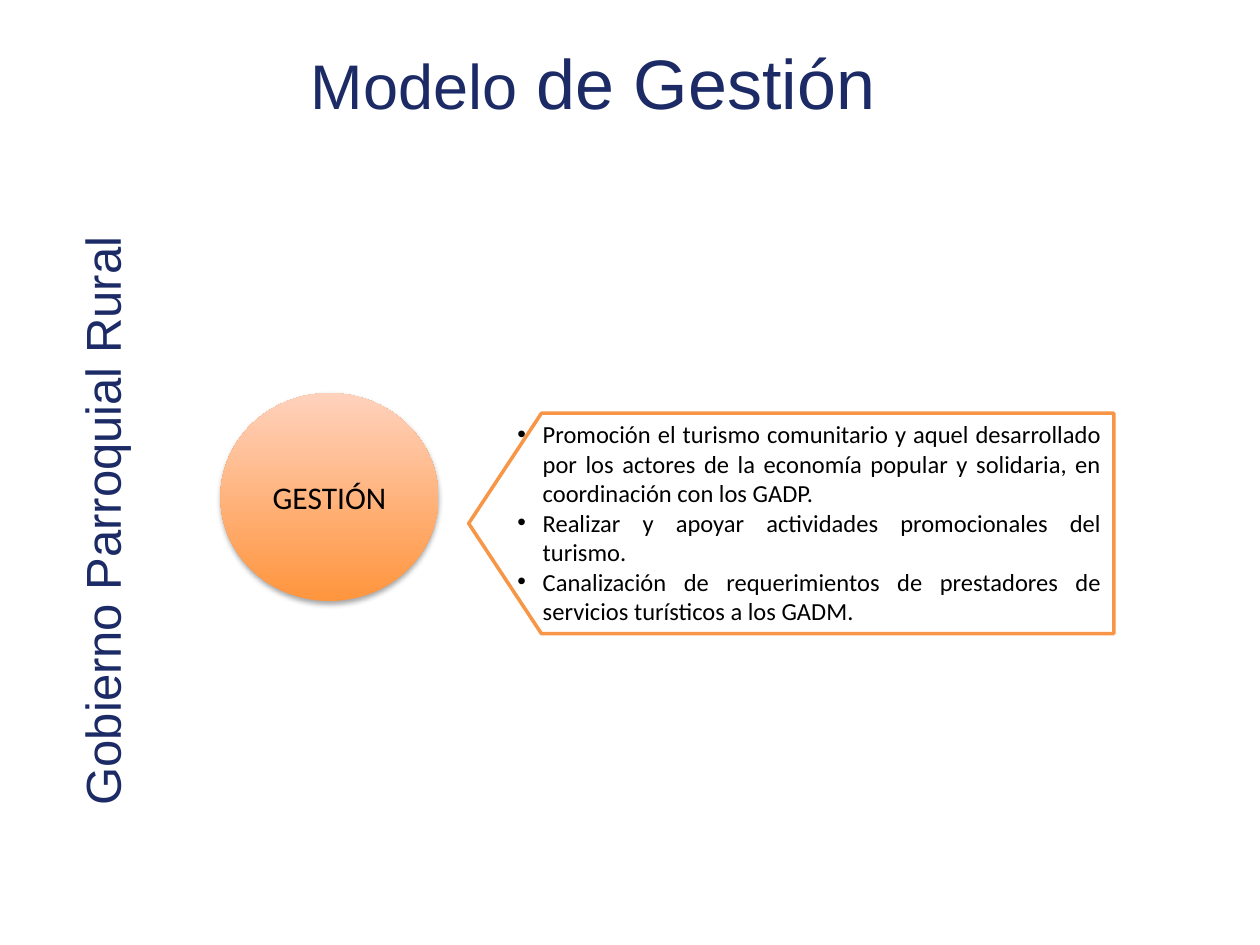
from dataclasses import dataclass
from lxml.etree import SubElement
from pptx import Presentation
from pptx.dml.color import RGBColor
from pptx.enum.shapes import MSO_SHAPE
from pptx.enum.text import MSO_ANCHOR, MSO_AUTO_SIZE, PP_ALIGN
from pptx.oxml.ns import qn
from pptx.util import Inches, Pt


@dataclass(frozen=True)
class Theme:
    head: str = "Arial"
    body: str = "Calibri"
    navy: str = "1C2A66"
    black: str = "000000"
    white: str = "FFFFFF"
    edge: str = "F79646"
    deep: str = "FF953E"
    pale: str = "FFD2BD"
    lead: int = 36
    title: int = 40
    side: int = 28
    hub: int = 18
    list: int = 14


THEME = Theme()
WIDE, HIGH = Inches(10), Inches(7.5)
DUTIES = (
    "Promoción el turismo comunitario y aquel desarrollado por los actores de la "
    "economía popular y solidaria, en coordinación con los GADP.",
    "Realizar y apoyar actividades promocionales del turismo.",
    "Canalización de requerimientos de prestadores de servicios turísticos a los GADM.",
)


def area(left, top, width, height):
    return [round(share * side / 100) for share, side in
            zip((left, top, width, height), (WIDE, HIGH, WIDE, HIGH))]


def style(run, face, size, color):
    run.font.name = face
    run.font.size = Pt(size)
    run.font.color.rgb = RGBColor.from_string(color)


def center(shape):
    frame = shape.text_frame
    frame.word_wrap = True
    frame.vertical_anchor = MSO_ANCHOR.MIDDLE
    para = frame.paragraphs[0]
    para.alignment = PP_ALIGN.CENTER
    return para


def write(shape, text, face, size, color):
    para = center(shape)
    para.text = text
    style(para.runs[0], face, size, color)


def add_title(slide, parts):
    title = slide.shapes.title
    title.left, title.top, title.width, title.height = area(5.8, 2.27, 82.5, 12.67)
    para = center(title)
    for text, size in parts:
        run = para.add_run()
        run.text = text
        style(run, THEME.head, size, THEME.navy)


def add_side(slide, text):
    box = slide.shapes.add_textbox(*area(-18.3, 48.8, 52.7, 12.67))
    box.rotation = 270
    write(box, text, THEME.head, THEME.side, THEME.navy)


def add_shade(shape):
    shape.shadow.inherit = False
    effects = shape.element.spPr.find(qn("a:effectLst"))
    shade = SubElement(effects, qn("a:outerShdw"), blurRad=str(Pt(3.1)),
                       dist=str(Pt(1.8)), dir="5400000", rotWithShape="0")
    color = SubElement(shade, qn("a:srgbClr"), val=THEME.black)
    SubElement(color, qn("a:alpha"), val="35000")


def add_hub(slide, text):
    hub = slide.shapes.add_shape(MSO_SHAPE.OVAL, *area(17.5, 41.6, 17.3, 22))
    hub.fill.gradient()
    hub.fill.gradient_angle = 90
    for stop, color in zip(hub.fill.gradient_stops, (THEME.deep, THEME.pale)):
        stop.color.rgb = RGBColor.from_string(color)
    hub.line.fill.background()
    add_shade(hub)
    write(hub, text, THEME.body, THEME.hub, THEME.black)


def add_bullet(para):
    props = para._p.get_or_add_pPr()
    props.set("marL", str(Inches(0.2)))
    props.set("indent", str(-Inches(0.2)))
    SubElement(props, qn("a:buFont"), typeface="Arial")
    SubElement(props, qn("a:buChar"), char="•")


def add_panel(slide, items):
    panel = slide.shapes.add_shape(MSO_SHAPE.PENTAGON, *area(37.2, 43.73, 51.2, 23.33))
    panel.adjustments[0] = 0.33
    panel.element.spPr.xfrm.set("flipH", "1")
    panel.shadow.inherit = False
    panel.fill.solid()
    panel.fill.fore_color.rgb = RGBColor.from_string(THEME.white)
    panel.line.color.rgb = RGBColor.from_string(THEME.edge)
    panel.line.width = Pt(2)
    frame = panel.text_frame
    frame.word_wrap = True
    frame.auto_size = MSO_AUTO_SIZE.SHAPE_TO_FIT_TEXT
    frame.vertical_anchor = MSO_ANCHOR.TOP
    frame.text = "\n".join(items)
    for para in frame.paragraphs:
        add_bullet(para)
        para.alignment = PP_ALIGN.JUSTIFY
        style(para.runs[0], THEME.body, THEME.list, THEME.black)


def main():
    deck = Presentation()
    deck.slide_width, deck.slide_height = WIDE, HIGH
    slide = deck.slides.add_slide(deck.slide_layouts[5])
    add_title(slide, (("Modelo", THEME.lead), (" de Gestión", THEME.title)))
    add_side(slide, "Gobierno Parroquial Rural")
    add_hub(slide, "GESTIÓN")
    add_panel(slide, DUTIES)
    deck.save("out.pptx")


if __name__ == "__main__":
    main()
